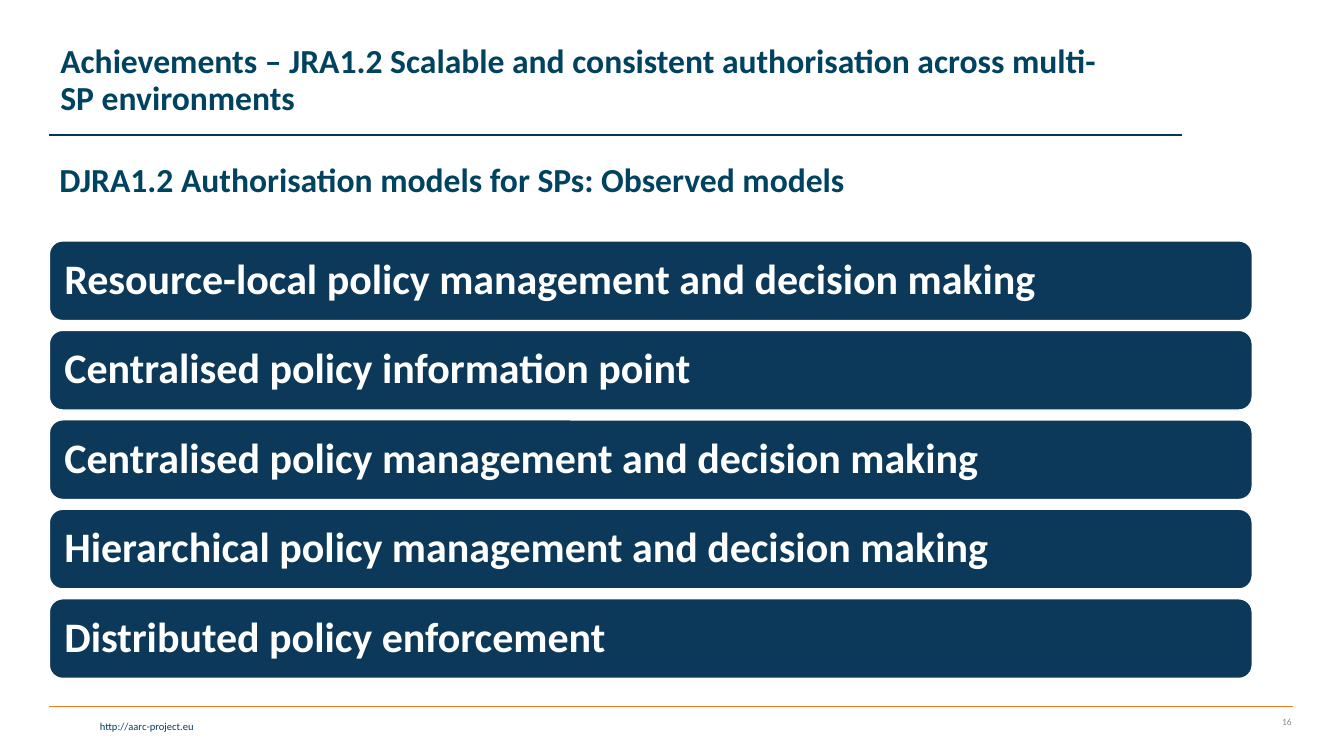
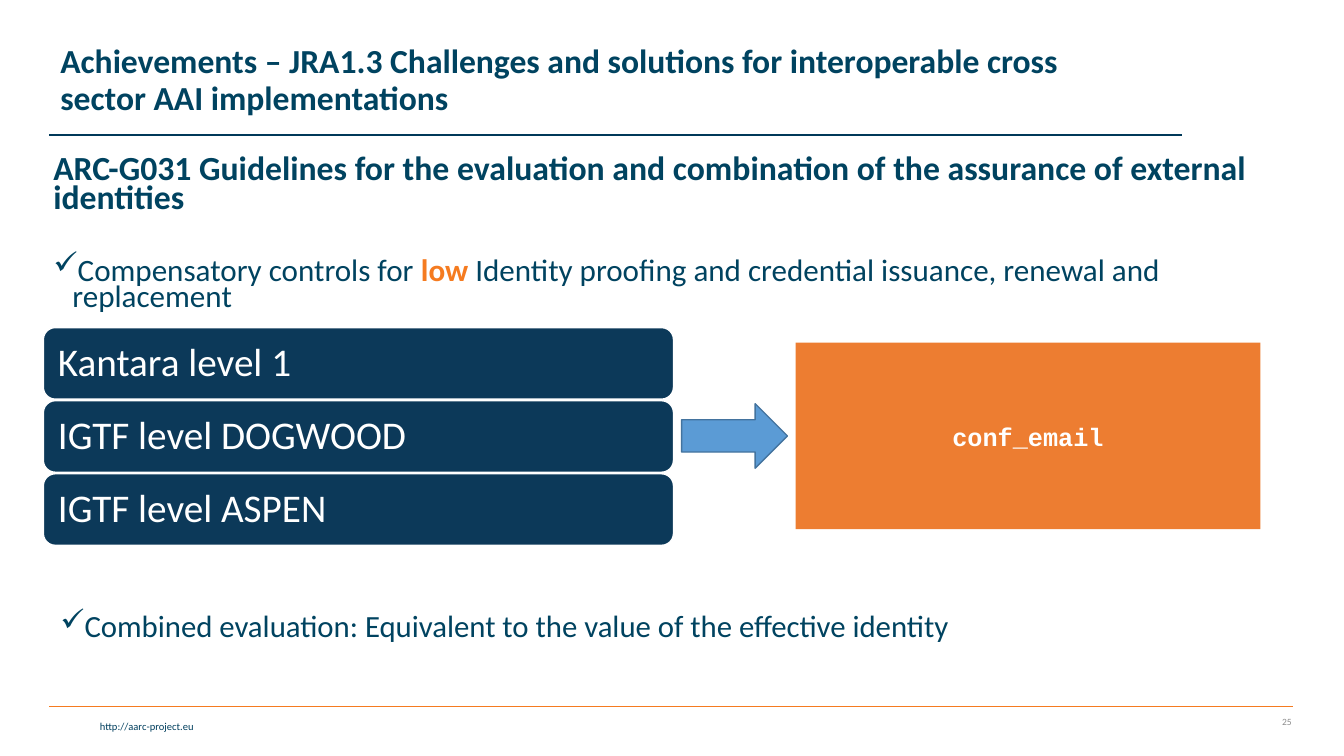
from lxml import etree
from pptx import Presentation
from pptx.dml.color import RGBColor
from pptx.enum import shapes, text
from pptx.oxml import ns
from pptx.util import Inches, Pt

NAVY = RGBColor(0x0C, 0x39, 0x59)
RULE = RGBColor(0x00, 0x39, 0x59)
TEAL = RGBColor(0x00, 0x43, 0x60)
LINK = RGBColor(0x00, 0x3F, 0x5E)
ORANGE = RGBColor(0xF5, 0x7B, 0x20)
BOX_ORANGE = RGBColor(0xED, 0x7D, 0x31)
ARROW_FILL = RGBColor(0x5B, 0x9B, 0xD5)
ARROW_LINE = RGBColor(0x43, 0x73, 0x9E)
GREY = RGBColor(0x8C, 0x8C, 0x8C)
WHITE = RGBColor(0xFF, 0xFF, 0xFF)

LEFT = text.PP_ALIGN.LEFT
CENTER = text.PP_ALIGN.CENTER
RIGHT = text.PP_ALIGN.RIGHT
MIDDLE = text.MSO_ANCHOR.MIDDLE
TOP = text.MSO_ANCHOR.TOP
KIND = shapes.MSO_SHAPE


def add_run(p, content, size, color, bold=False, font="Calibri"):
    r = p.add_run()
    r.text = content
    r.font.name = font
    r.font.size = Pt(size)
    r.font.bold = bold
    r.font.color.rgb = color


def add_check(p):
    pPr = p._p.get_or_add_pPr()
    pPr.set("marL", str(Inches(0.19)))
    pPr.set("indent", str(-Inches(0.19)))
    etree.SubElement(pPr, ns.qn("a:buChar")).set("char", "✓")


def add_text(s, box, content, size, color, bold=False, align=LEFT,
             anchor=TOP, spacing=1.0, check=False):
    tf = s.shapes.add_textbox(*map(Inches, box)).text_frame
    tf.word_wrap = True
    tf.vertical_anchor = anchor
    p = tf.paragraphs[0]
    if check:
        add_check(p)
    p.alignment = align
    p.line_spacing = spacing
    add_run(p, content, size, color, bold)
    return tf


def add_rule(s, left, right, y, color):
    line = s.shapes.add_connector(
        shapes.MSO_CONNECTOR.STRAIGHT,
        Inches(left), Inches(y), Inches(right), Inches(y))
    line.line.color.rgb = color
    line.line.width = Pt(1)
    etree.SubElement(line._element.spPr, ns.qn("a:effectLst"))


def add_block(s, kind, box, fill, outline=None):
    sp = s.shapes.add_shape(kind, *map(Inches, box))
    sp.shadow.inherit = False
    sp.fill.solid()
    sp.fill.fore_color.rgb = fill
    if outline is None:
        sp.line.fill.background()
    else:
        sp.line.color.rgb = outline
        sp.line.width = Pt(1)
    return sp


def add_bars(s, box, labels, bar_height, size, bold=False):
    left, top, width, height = box
    pitch = (height - bar_height) / (len(labels) - 1)
    for i, label in enumerate(labels):
        bar = add_block(s, KIND.ROUNDED_RECTANGLE,
                        (left, top + i * pitch, width, bar_height), NAVY, WHITE)
        tf = bar.text_frame
        tf.word_wrap = True
        tf.vertical_anchor = MIDDLE
        tf.margin_left = tf.margin_right = Inches(0.11)
        p = tf.paragraphs[0]
        p.alignment = LEFT
        p.line_spacing = 0.9
        add_run(p, label, size, WHITE, bold)


def add_outcome(s, box, label):
    left, top, width, height = box
    arrow_width, arrow_height, box_left = 1.05, 0.64, 1.13
    target = add_block(s, KIND.RECTANGLE,
                       (left + box_left, top, width - box_left, height), BOX_ORANGE)
    tf = target.text_frame
    tf.vertical_anchor = MIDDLE
    p = tf.paragraphs[0]
    p.alignment = CENTER
    add_run(p, label, 18, WHITE, True, "Courier New")
    add_block(s, KIND.RIGHT_ARROW,
              (left, top + (height - arrow_height) / 2, arrow_width, arrow_height),
              ARROW_FILL, ARROW_LINE)


def add_base(prs, title, number):
    s = prs.slides.add_slide(prs.slide_layouts[6])
    add_rule(s, 0.49, 12.82, 7.01, ORANGE)
    add_text(s, (0.03, 7.09, 1.99, 0.23), "http://aarc-project.eu", 7.5, LINK, align=RIGHT)
    add_rule(s, 0.49, 11.72, 1.34, RULE)
    add_text(s, (12.1, 7.01, 0.81, 0.3), number, 6.8, GREY, align=RIGHT, anchor=MIDDLE)
    add_text(s, (0.5, 0.08, 10.51, 1.45), title, 24, TEAL, True, anchor=MIDDLE, spacing=0.9)
    return s


def build_models(prs):
    s = add_base(prs, "Achievements – JRA1.2 Scalable and consistent authorisation "
                      "across multi-SP environments", "16")
    add_text(s, (0.49, 1.57, 11.93, 0.6),
             "DJRA1.2 Authorisation models for SPs: Observed models", 24, TEAL, True, spacing=0.9)
    add_bars(s, (0.49, 2.39, 11.93, 4.34), (
        "Resource-local policy management and decision making",
        "Centralised policy information point",
        "Centralised policy management and decision making",
        "Hierarchical policy management and decision making",
        "Distributed policy enforcement",
    ), 0.79, 30, True)


def build_assurance(prs):
    s = add_base(prs, "Achievements – JRA1.3 Challenges and solutions for interoperable "
                      "cross sector AAI implementations", "25")
    tf = add_text(s, (0.43, 1.52, 12.08, 1.73),
                  "ARC-G031 Guidelines for the evaluation and combination of the assurance "
                  "of external identities", 24.1, TEAL, True, spacing=0.7)
    p = tf.add_paragraph()
    add_check(p)
    p.line_spacing = 0.7
    p.space_before = Pt(32.4)
    add_run(p, "Compensatory controls for ", 22.2, TEAL)
    add_run(p, "low", 22.2, ORANGE, True)
    add_run(p, " Identity proofing and credential issuance, renewal and replacement", 22.2, TEAL)
    add_bars(s, (0.43, 3.25, 6.25, 2.16),
             ("Kantara level 1", "IGTF level DOGWOOD", "IGTF level ASPEN"), 0.71, 28)
    add_outcome(s, (6.76, 3.4, 5.74, 1.85), "conf_email")
    add_text(s, (0.5, 6.01, 12.08, 0.86),
             "Combined evaluation: Equivalent to the value of the effective identity",
             22, TEAL, spacing=0.9, check=True)


def main():
    prs = Presentation()
    prs.slide_width = Inches(13.33)
    prs.slide_height = Inches(7.5)
    build_models(prs)
    build_assurance(prs)
    prs.save("out.pptx")


if __name__ == "__main__":
    main()
